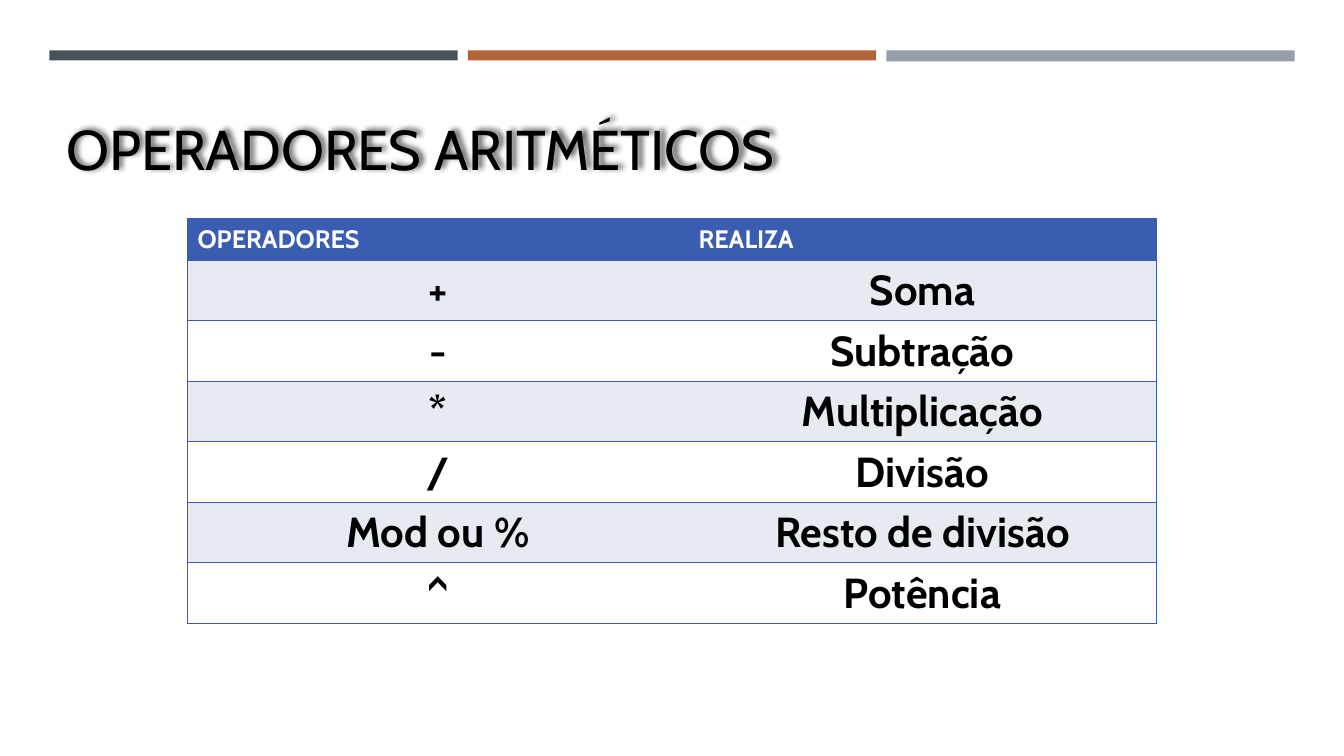
from dataclasses import dataclass

from lxml import etree
from pptx import Presentation
from pptx import util as u
from pptx.dml.color import RGBColor
from pptx.enum import shapes, text
from pptx.oxml import ns

PX = 9144  # EMU per px, 100 px to the inch
FONT = "Cabin"
BLACK = RGBColor(0x00, 0x00, 0x00)
WHITE = RGBColor(0xFF, 0xFF, 0xFF)
BLUE = RGBColor(0x3B, 0x5D, 0xB1)
BAND = RGBColor(0xE8, 0xEA, 0xF2)
SLATE = RGBColor(0x46, 0x53, 0x59)
RUST = RGBColor(0xB1, 0x65, 0x3B)
GREY = RGBColor(0x96, 0x9F, 0xA7)

BAR_LEFT, BAR_TOP, BAR_WIDTH, BAR_PITCH = 49, 50, 405, 415
COLUMN_WIDTHS = (497, 464)
HEADER_HEIGHT, ROW_HEIGHT = 41, 60


@dataclass(frozen=True)
class Bar:
    color: RGBColor
    height: int


@dataclass(frozen=True)
class Operator:
    symbol: str
    action: str


BARS = (Bar(SLATE, 10), Bar(RUST, 10), Bar(GREY, 11))
HEADER = Operator("OPERADORES", "REALIZA")
OPERATORS = (
    Operator("+", "Soma"),
    Operator("-", "Subtração"),
    Operator("*", "Multiplicação"),
    Operator("/", "Divisão"),
    Operator("Mod ou %", "Resto de divisão"),
    Operator("^", "Potência"),
)


def px(n: int) -> u.Emu:
    return u.Emu(n * PX)


def write(tf, content: str, *, size: int, color: RGBColor = BLACK,
          bold: bool = False, align=text.PP_ALIGN.CENTER) -> None:
    p = tf.paragraphs[0]
    p.alignment = align
    r = p.add_run()
    r.text = content
    r.font.name, r.font.size, r.font.bold = FONT, u.Pt(size), bold
    r.font.color.rgb = color


def add_bar(s, index: int, bar: Bar) -> None:
    sp = s.shapes.add_shape(shapes.MSO_SHAPE.RECTANGLE, px(BAR_LEFT + index * BAR_PITCH),
                            px(BAR_TOP), px(BAR_WIDTH), px(bar.height))
    sp.shadow.inherit = False
    sp.fill.solid()
    sp.fill.fore_color.rgb = bar.color
    sp.line.fill.background()


def add_soft_shadow(sp) -> None:
    """Give the text of an unfilled box a blurred shadow."""
    effects = etree.SubElement(sp._element.spPr, ns.qn("a:effectLst"))
    shadow = etree.SubElement(effects, ns.qn("a:outerShdw"), blurRad=str(px(6)),
                              dist=str(px(4)), dir="18900000", algn="bl", rotWithShape="0")
    color = etree.SubElement(shadow, ns.qn("a:srgbClr"), val=str(BLACK))
    etree.SubElement(color, ns.qn("a:alpha"), val="60000")


def add_title(s, content: str) -> None:
    sp = s.shapes.add_textbox(px(52), px(109), px(730), px(77))
    tf = sp.text_frame
    tf.word_wrap = False
    tf.auto_size = text.MSO_AUTO_SIZE.SHAPE_TO_FIT_TEXT
    write(tf, content, size=40)
    sp.fill.background()
    add_soft_shadow(sp)


def set_borders(cell, hidden_side: str) -> None:
    """Draw blue borders on all sides but the one between the columns."""
    tc_pr = cell._tc.get_or_add_tcPr()
    for side in "LRTB":
        ln = etree.SubElement(tc_pr, ns.qn(f"a:ln{side}"), w=str(u.Pt(1)))
        if side == hidden_side:
            etree.SubElement(ln, ns.qn("a:noFill"))
        else:
            fill = etree.SubElement(ln, ns.qn("a:solidFill"))
            etree.SubElement(fill, ns.qn("a:srgbClr"), val=str(BLUE))


def add_row(table, index: int, operator: Operator, height: int, fill: RGBColor, **fmt) -> None:
    table.rows[index].height = px(height)
    for column, content in enumerate((operator.symbol, operator.action)):
        cell = table.cell(index, column)
        set_borders(cell, "RL"[column])
        cell.fill.solid()
        cell.fill.fore_color.rgb = fill
        write(cell.text_frame, content, bold=True, **fmt)


def add_operator_table(s) -> None:
    height = HEADER_HEIGHT + ROW_HEIGHT * len(OPERATORS)
    table = s.shapes.add_table(len(OPERATORS) + 1, len(COLUMN_WIDTHS), px(186), px(217),
                               px(sum(COLUMN_WIDTHS)), px(height)).table
    for column, width in zip(table.columns, COLUMN_WIDTHS):
        column.width = px(width)
    add_row(table, 0, HEADER, HEADER_HEIGHT, BLUE, size=18, color=WHITE,
            align=text.PP_ALIGN.LEFT)
    for i, operator in enumerate(OPERATORS, start=1):
        add_row(table, i, operator, ROW_HEIGHT, BAND if i % 2 else WHITE, size=30)


def main() -> None:
    prs = Presentation()
    prs.slide_width, prs.slide_height = px(1333), px(750)
    s = prs.slides.add_slide(prs.slide_layouts[6])
    for i, bar in enumerate(BARS):
        add_bar(s, i, bar)
    add_title(s, "OPERADORES ARITMÉTICOS")
    add_operator_table(s)
    prs.save("out.pptx")


if __name__ == "__main__":
    main()
